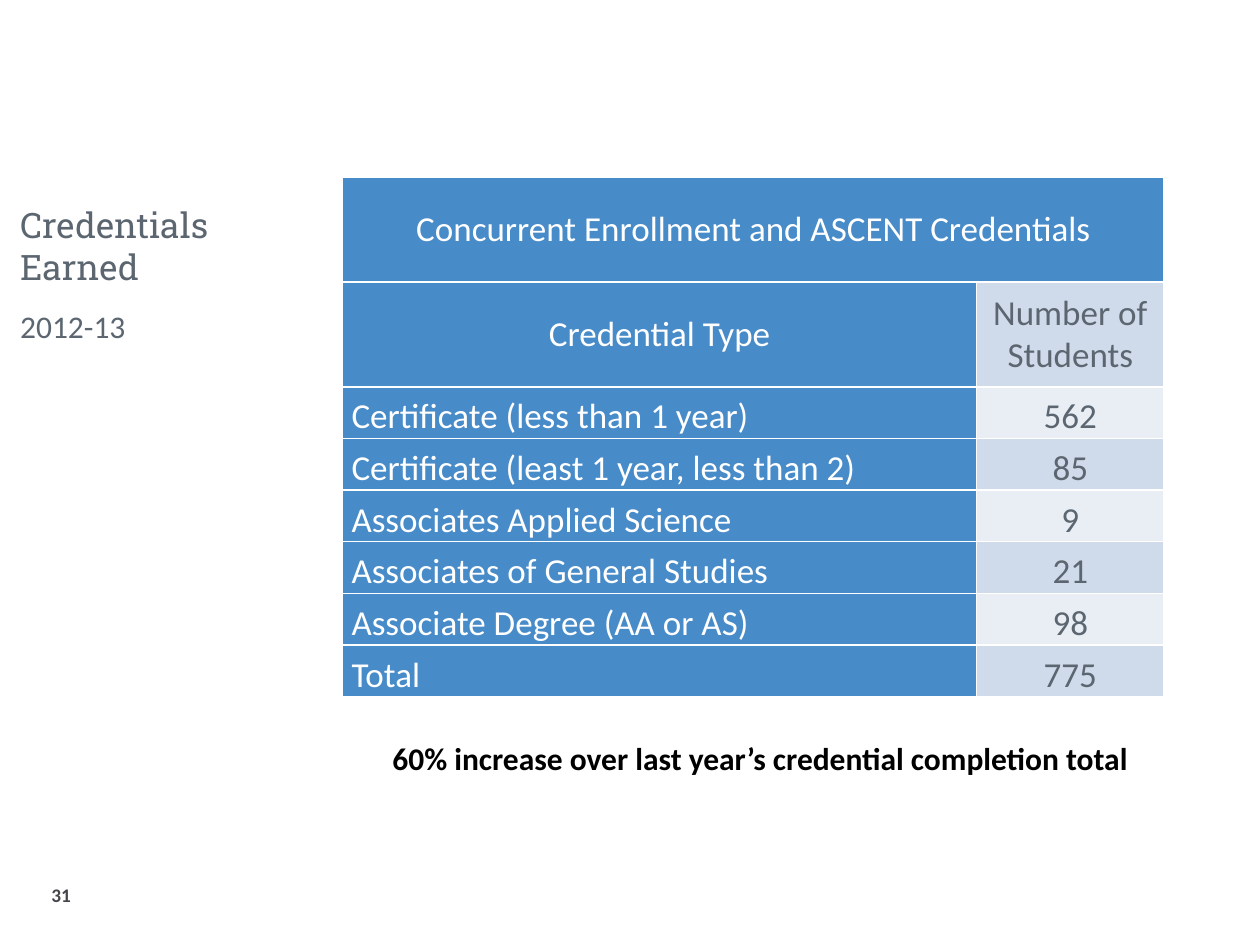
from dataclasses import dataclass

from lxml import etree
from pptx import Presentation
from pptx.dml.color import RGBColor
from pptx.enum.text import MSO_ANCHOR, PP_ALIGN
from pptx.oxml.ns import qn
from pptx.util import Inches, Pt

LEFT, CENTER = PP_ALIGN.LEFT, PP_ALIGN.CENTER
TOP, MIDDLE, BOTTOM = MSO_ANCHOR.TOP, MSO_ANCHOR.MIDDLE, MSO_ANCHOR.BOTTOM
CAPTION_LAYOUT = 7


@dataclass(frozen=True)
class Theme:
    body_font: str = "Calibri"
    title_font: str = "Roboto Slab"
    grey: str = "5C6670"
    dark: str = "45454C"
    black: str = "000000"
    white: str = "FFFFFF"
    blue: str = "488BC9"
    band: str = "CFDAEB"
    light_band: str = "E9EEF5"
    large: int = 20
    medium: int = 18
    small: int = 11


def write(frame, text, *, size, color, font, bold=False, align=LEFT):
    para = frame.paragraphs[0]
    para.alignment = align
    para.space_before = Pt(0)
    span = para.add_run()
    span.text = text
    span.font.size = Pt(size)
    span.font.name = font
    span.font.bold = bold
    span.font.color.rgb = RGBColor.from_string(color)


def set_borders(cell, color, width):
    properties = cell._tc.get_or_add_tcPr()
    for index, side in enumerate(("lnL", "lnR", "lnT", "lnB")):
        line = etree.Element(qn(f"a:{side}"), w=str(Pt(width)))
        fill = etree.SubElement(line, qn("a:solidFill"))
        etree.SubElement(fill, qn("a:srgbClr"), val=color)
        properties.insert(index, line)


class SlideBuilder:
    def __init__(self, deck, theme):
        self.theme = theme
        self.page = deck.slides.add_slide(deck.slide_layouts[CAPTION_LAYOUT])

    def placeholder(self, index, text, place, *, anchor, top_inset=0.05, **style):
        box = self.page.placeholders[index]
        box.left, box.top, box.width, box.height = map(Inches, place)
        frame = box.text_frame
        frame.vertical_anchor = anchor
        frame.margin_top = Inches(top_inset)
        write(frame, text, **style)

    def remove_placeholder(self, index):
        element = self.page.placeholders[index]._element
        element.getparent().remove(element)

    def text(self, text, place, *, anchor=TOP, **style):
        frame = self.page.shapes.add_textbox(*map(Inches, place)).text_frame
        frame.word_wrap = True
        frame.vertical_anchor = anchor
        write(frame, text, font=self.theme.body_font, **style)

    def cell(self, cell, text, *, fill, color, anchor, align):
        cell.fill.solid()
        cell.fill.fore_color.rgb = RGBColor.from_string(fill)
        cell.margin_left = cell.margin_right = Inches(0.07)
        cell.margin_top = cell.margin_bottom = 0
        cell.vertical_anchor = anchor
        set_borders(cell, self.theme.white, 1)
        write(cell.text_frame, text, size=self.theme.large, color=color,
              font=self.theme.body_font, align=align)

    def table(self, title, rows, place, widths, heights):
        """Draw a spanning title row, a heading row and banded data rows."""
        theme = self.theme
        table = self.page.shapes.add_table(
            len(rows) + 1, len(widths), *map(Inches, place)).table
        table.first_row = table.horz_banding = False
        for column, width in zip(table.columns, widths):
            column.width = Inches(width)
        for row, height in zip(table.rows, heights):
            row.height = Inches(height)
        table.cell(0, 0).merge(table.cell(0, 1))
        self.cell(table.cell(0, 0), title, fill=theme.blue, color=theme.white,
                  anchor=MIDDLE, align=CENTER)
        for index, (label, value) in enumerate(rows, start=1):
            heading = index == 1
            anchor = MIDDLE if heading else BOTTOM
            self.cell(table.cell(index, 0), label, fill=theme.blue,
                      color=theme.white, anchor=anchor,
                      align=CENTER if heading else LEFT)
            self.cell(table.cell(index, 1), value,
                      fill=theme.band if index % 2 else theme.light_band,
                      color=theme.grey, anchor=anchor, align=CENTER)


def main():
    theme = Theme()
    deck = Presentation()
    deck.slide_width, deck.slide_height = Inches(10), Inches(7.5)
    slide = SlideBuilder(deck, theme)
    slide.remove_placeholder(1)

    slide.placeholder(0, "Credentials Earned", (0.06, 1.2, 2.09, 1.13),
                      anchor=BOTTOM, size=theme.large, color=theme.grey,
                      font=theme.title_font)
    slide.placeholder(2, "2012-13", (0.06, 2.44, 2.09, 3.08), anchor=TOP,
                      top_inset=0, size=theme.medium, color=theme.grey,
                      font=theme.body_font)
    credentials = [
        ("Credential Type", "Number of Students"),
        ("Certificate (less than 1 year)", "562"),
        ("Certificate (least 1 year, less than 2)", "85"),
        ("Associates Applied Science", "9"),
        ("Associates of General Studies", "21"),
        ("Associate Degree (AA or AS)", "98"),
        ("Total", "775"),
    ]
    slide.table("Concurrent Enrollment and ASCENT Credentials", credentials,
                (2.72, 1.41, 6.52, 4.13), widths=(5.03, 1.49),
                heights=[0.83] * 2 + [0.41] * 6)
    slide.text("60% increase over last year’s credential completion total",
               (2.45, 5.82, 7.17, 0.77), size=theme.medium,
               color=theme.black, bold=True, align=CENTER)
    slide.text("31", (0.31, 6.95, 1.83, 0.3), anchor=MIDDLE,
               size=theme.small, color=theme.dark, bold=True)
    deck.save("out.pptx")


if __name__ == "__main__":
    main()
